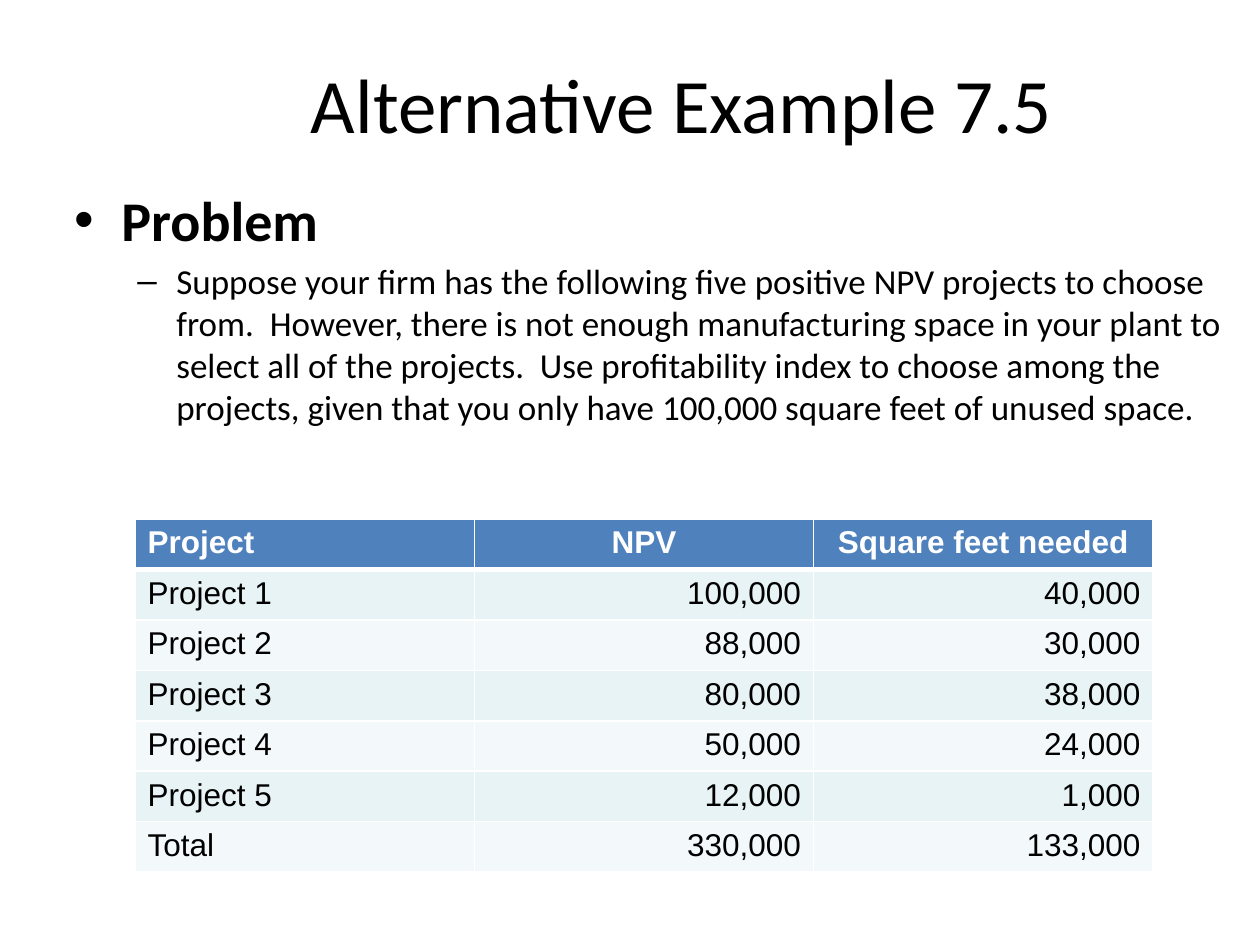
from lxml.etree import SubElement
from pptx import Presentation
from pptx.dml.color import RGBColor
from pptx.enum.text import MSO_ANCHOR, PP_ALIGN
from pptx.oxml.ns import qn
from pptx.util import Emu, Pt

HUES = {"ink": "000000", "white": "FFFFFF", "head": "4F81BD", "odd": "E7F3F4", "even": "F3F9FA"}


def px(n):
    return Emu(round(n * 914400 / 126))


def put(para, text, size, face, hue="ink", bold=False):
    run = para.add_run()
    run.text = text
    run.font.size = Pt(size)
    run.font.name = face
    run.font.bold = bold
    run.font.color.rgb = RGBColor.from_string(HUES[hue])


deck = Presentation()
deck.slide_width, deck.slide_height = px(1260), px(945)
slide = deck.slides.add_slide(deck.slide_layouts[6])

title = slide.shapes.add_textbox(px(160), px(24), px(1061), px(158)).text_frame
title.word_wrap = True
title.vertical_anchor = MSO_ANCHOR.MIDDLE
title.paragraphs[0].alignment = PP_ALIGN.CENTER
put(title.paragraphs[0], "Alternative Example 7.5 ", 44, "Calibri")

body = slide.shapes.add_textbox(px(62), px(179), px(1207), px(640)).text_frame
body.word_wrap = True
points = [
    ("Problem", 32, True, "•", 47, 47, 0),
    ("Suppose your firm has the following five positive NPV projects to choose from.  "
     "However, there is not enough manufacturing space in your plant to select all of the projects.  "
     "Use profitability index to choose among the projects, "
     "given that you only have 100,000 square feet of unused space.", 20, False, "–", 102, 39, 4),
]
for i, (text, size, bold, mark, left, hang, gap) in enumerate(points):
    para = body.paragraphs[0] if i == 0 else body.add_paragraph()
    para.level = i
    props = para._p.get_or_add_pPr()
    props.set("marL", str(px(left)))
    props.set("indent", str(-px(hang)))
    SubElement(props, qn("a:buFont"), typeface="Arial")
    SubElement(props, qn("a:buChar"), char=mark)
    para.space_before = Pt(gap)
    put(para, text, size, "Calibri", bold=bold)

rows = [
    ("Project", "NPV", "Square feet needed"),
    ("Project 1", "100,000", "40,000"),
    ("Project 2", "88,000", "30,000"),
    ("Project 3", "80,000", "38,000"),
    ("Project 4", "50,000", "24,000"),
    ("Project 5", "12,000", "1,000"),
    ("Total", "330,000", "133,000"),
]
grid = slide.shapes.add_table(len(rows), 3, px(135), px(519), px(1018), px(353)).table
for r, row in enumerate(rows):
    for c, text in enumerate(row):
        cell = grid.cell(r, c)
        props = cell._tc.get_or_add_tcPr()
        for side in "LRTB":
            thick = (r, side) in [(0, "B"), (1, "T")]
            line = SubElement(props, qn("a:ln" + side), w=str(Pt(3 if thick else 1)))
            fill = SubElement(line, qn("a:solidFill"))
            SubElement(fill, qn("a:srgbClr"), val=HUES["white"])
        hue = "head" if r == 0 else "odd" if r % 2 else "even"
        cell.fill.solid()
        cell.fill.fore_color.rgb = RGBColor.from_string(HUES[hue])
        para = cell.text_frame.paragraphs[0]
        if c:
            para.alignment = PP_ALIGN.RIGHT if r else PP_ALIGN.CENTER
        put(para, text, 18, "Arial", "ink" if r else "white", r == 0)

deck.save("out.pptx")
